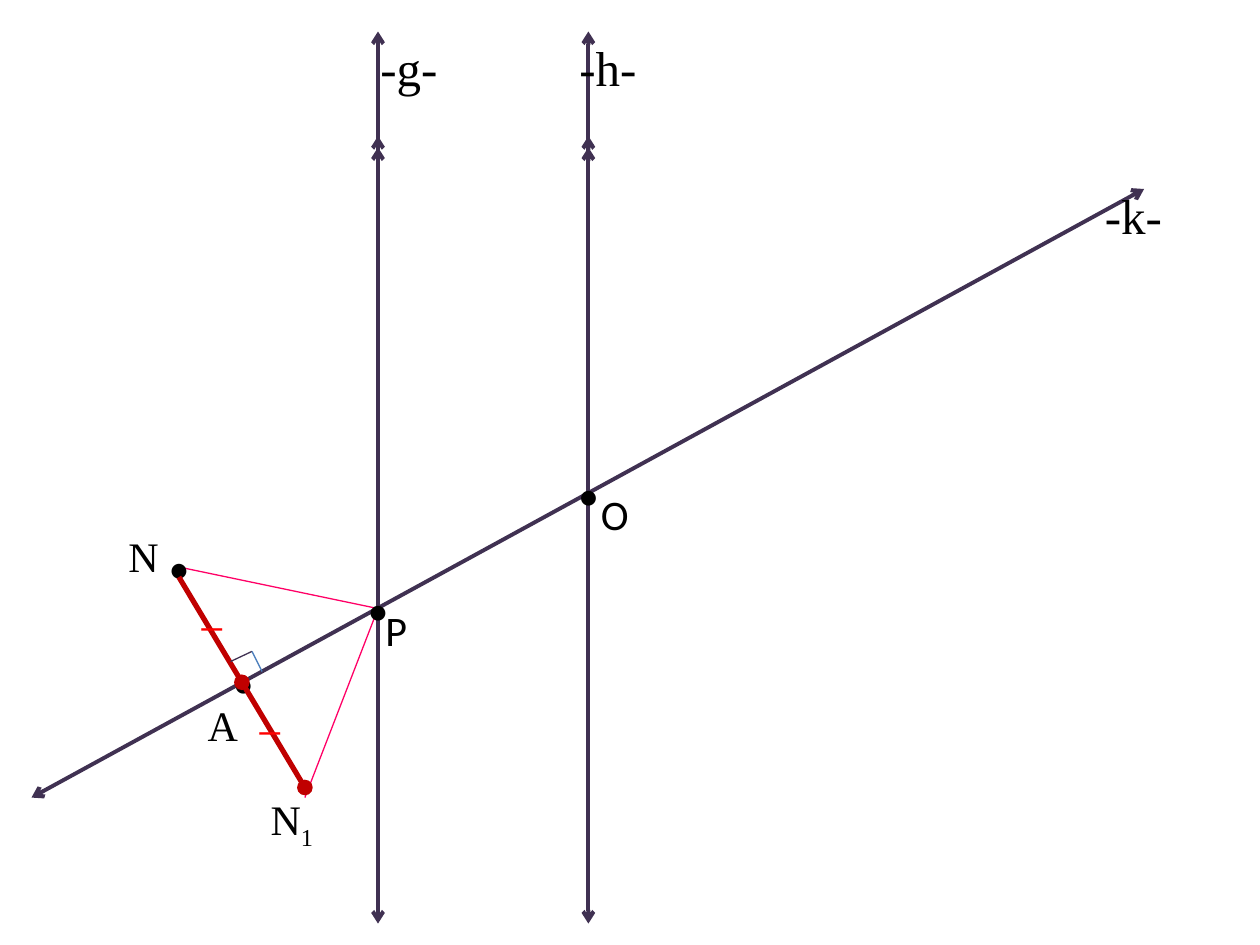
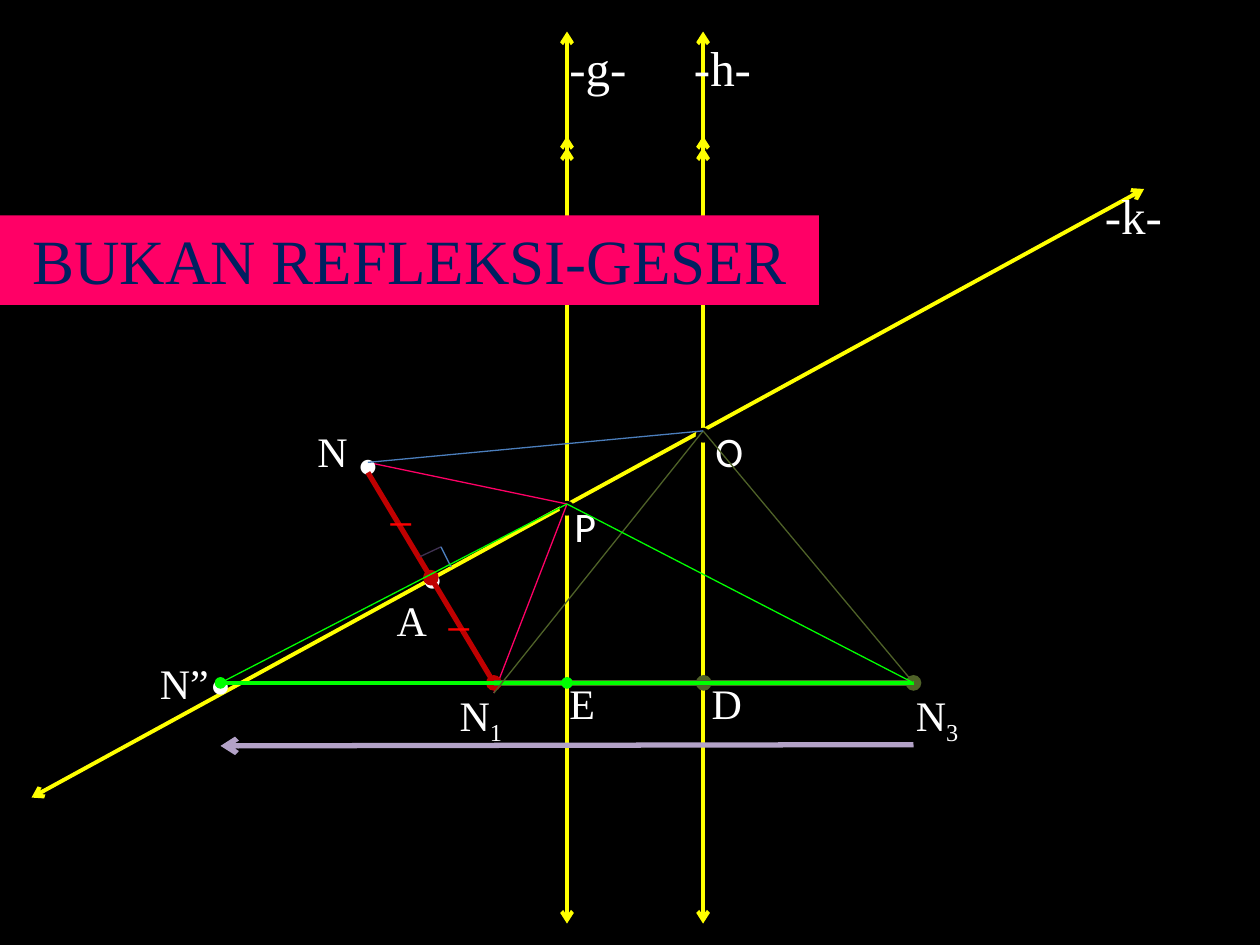
from lxml import etree
from pptx import Presentation
from pptx.dml.color import RGBColor
from pptx.enum import shapes, text
from pptx.oxml.ns import qn
from pptx.util import Inches, Pt

COLORS = {
    "white": "FFFFFF", "black": "000000", "purple": "403152", "yellow": "FFFF00",
    "pink": "FF0066", "crimson": "C00000", "red": "FF0000", "blue": "4B7EBC",
    "olive": "4F6228", "green": "00FF00", "lilac": "B3A2C7", "navy": "002060",
}
SERIF, SANS = "Times New Roman", "Calibri"


def rgb(name):
    return RGBColor.from_string(COLORS[name])


def style_run(run, size, font, color):
    run.font.size = Pt(size)
    run.font.name = font
    run.font.color.rgb = rgb(color)


def draw_line(slide, start, end, color, width, head=None, tail=None):
    line = slide.shapes.add_connector(
        shapes.MSO_CONNECTOR.STRAIGHT, *(Inches(v) for v in (*start, *end)))
    line.line.color.rgb = rgb(color)
    line.line.width = Pt(width)
    outline = line.line._get_or_add_ln()
    for tag, kind in (("a:headEnd", head), ("a:tailEnd", tail)):
        if kind:
            etree.SubElement(outline, qn(tag)).set("type", kind)
    etree.SubElement(line._element.spPr, qn("a:effectLst"))


def draw_label(slide, left, top, words, color, width=0.45, size=24, font=SERIF, sub=""):
    box = slide.shapes.add_textbox(
        Inches(left), Inches(top), Inches(width), Inches(0.5 if size == 24 else 0.57))
    frame = box.text_frame
    frame.word_wrap = size != 24
    frame.auto_size = text.MSO_AUTO_SIZE.SHAPE_TO_FIT_TEXT
    frame.text = words
    paragraph = frame.paragraphs[0]
    if sub:
        index = paragraph.add_run()
        index.text = sub
        index._r.get_or_add_rPr().set("baseline", "-25000")
    for run in paragraph.runs:
        style_run(run, size, font, color)


def draw_dot(slide, point, color):
    draw_label(slide, point[0] - 0.18, point[1] - 0.25, "•", color, 0.36, font=SANS)


def draw_bisected(slide, start, end, color, width):
    middle = tuple((a + b) / 2 for a, b in zip(start, end))
    draw_line(slide, start, middle, color, width)
    draw_line(slide, middle, end, color, width, "oval", "oval")


def draw_axes(slide, g, h, p, o, color, ink):
    draw_line(slide, (0.25, 6.33), (9.08, 1.5), color, 2.25, "arrow", "arrow")
    for x in (g, h):
        draw_line(slide, (x, 0.25), (x, 7.33), color, 2.25, "arrow", "arrow")
        for y in (1.67, 1.58):
            draw_line(slide, (x, y), (x, y - 0.5), color, 2.25, tail="arrow")
    for crossing in (p, o):
        draw_dot(slide, crossing, "black")
    for left, top, words in ((8.67, 1.42, "-k-"), (g - 0.08, 0.25, "-g-"),
                             (h - 0.17, 0.25, "-h-")):
        draw_label(slide, left, top, words, ink, 0.83, 28)
    draw_label(slide, p[0] - 0.04, p[1] - 0.08, "P", ink, 0.38, font=SANS)
    draw_label(slide, o[0], o[1] - 0.09, "O", ink, 0.42, font=SANS)


def draw_sight_lines(slide, p):
    x, y = p
    for end in ((x - 1.58, y - 0.33), (x - 0.58, y + 1.5)):
        draw_line(slide, p, end, "pink", 0.75)


def draw_reflection(slide, left, top, ink):
    def at(x, y):
        return left + x, top + y

    draw_dot(slide, at(0.5, 0.34), ink)
    draw_label(slide, *at(0, 0), "N", ink)
    draw_dot(slide, at(1.01, 1.25), ink)
    draw_bisected(slide, at(0.5, 0.42), at(1.5, 2.09), "crimson", 3)
    draw_label(slide, *at(1.13, 2.09), "N", ink, 0.56, sub="1")
    draw_label(slide, *at(0.63, 1.34), "A", ink)
    corner = at(1.08, 1.01)
    draw_line(slide, at(0.91, 1.09), corner, "purple", 0.75)
    draw_line(slide, corner, at(1.16, 1.17), "blue", 0.75)
    for x, y in ((0.58, 0.42), (1.04, 1.25)):
        draw_label(slide, *at(x, y), "_", "red", 0.37, font=SANS)


def draw_images(slide, p, o, n, n1, n2, n3, ink):
    draw_bisected(slide, n1, n3, "olive", 3)
    draw_label(slide, o[0] - 0.03, n1[1] - 0.09, "D", ink)
    draw_label(slide, n3[0] - 0.08, n3[1], "N", ink, 0.56, sub="3")
    draw_dot(slide, n2, ink)
    draw_bisected(slide, n3, n2, "green", 2.25)
    draw_label(slide, p[0] - 0.08, n1[1] - 0.09, "E", ink, 0.41)
    draw_label(slide, n2[0] - 0.58, n2[1] - 0.25, "N”", ink, 0.59)
    for start, end, color in (((n1[0], n1[1] + 0.08), o, "olive"), (n3, o, "olive"),
                              (n3, p, "green"), (n2, p, "green"), (o, n, "blue")):
        draw_line(slide, start, end, color, 0.75)
    draw_line(slide, (n3[0], 5.91), (n2[0], 5.92), "lilac", 3, tail="arrow")


def draw_banner(slide, left, top, width, height, words):
    banner = slide.shapes.title
    banner.left, banner.top, banner.width, banner.height = (
        Inches(v) for v in (left, top, width, height))
    banner.fill.solid()
    banner.fill.fore_color.rgb = rgb("pink")
    frame = banner.text_frame
    frame.text = words
    frame.word_wrap = True
    frame.auto_size = text.MSO_AUTO_SIZE.NONE
    frame.vertical_anchor = text.MSO_ANCHOR.TOP
    frame.paragraphs[0].alignment = text.PP_ALIGN.CENTER
    style_run(frame.paragraphs[0].runs[0], 36, SERIF, "navy")
    slide.shapes._spTree.append(banner._element)


def add_slide(deck, layout, background):
    slide = deck.slides.add_slide(deck.slide_layouts[layout])
    slide.background.fill.solid()
    slide.background.fill.fore_color.rgb = rgb(background)
    return slide


def build_first_reflection(deck):
    slide = add_slide(deck, 6, "white")
    p, o = (3, 4.83), (4.67, 3.92)
    draw_sight_lines(slide, p)
    draw_axes(slide, p[0], o[0], p, o, "purple", "black")
    draw_reflection(slide, 0.92, 4.16, "black")


def build_conclusion(deck):
    slide = add_slide(deck, 5, "black")
    p, o = (4.5, 4), (5.58, 3.42)
    draw_axes(slide, p[0], o[0], p, o, "yellow", "white")
    draw_sight_lines(slide, p)
    draw_reflection(slide, 2.42, 3.33, "white")
    draw_images(slide, p, o, n=(2.92, 3.67), n1=(3.92, 5.42), n2=(1.75, 5.42),
                n3=(7.25, 5.42), ink="white")
    draw_banner(slide, 0, 1.71, 6.5, 0.71, "BUKAN REFLEKSI-GESER")


def main():
    deck = Presentation()
    deck.slide_width, deck.slide_height = Inches(10), Inches(7.5)
    build_first_reflection(deck)
    build_conclusion(deck)
    deck.save("out.pptx")


if __name__ == "__main__":
    main()
